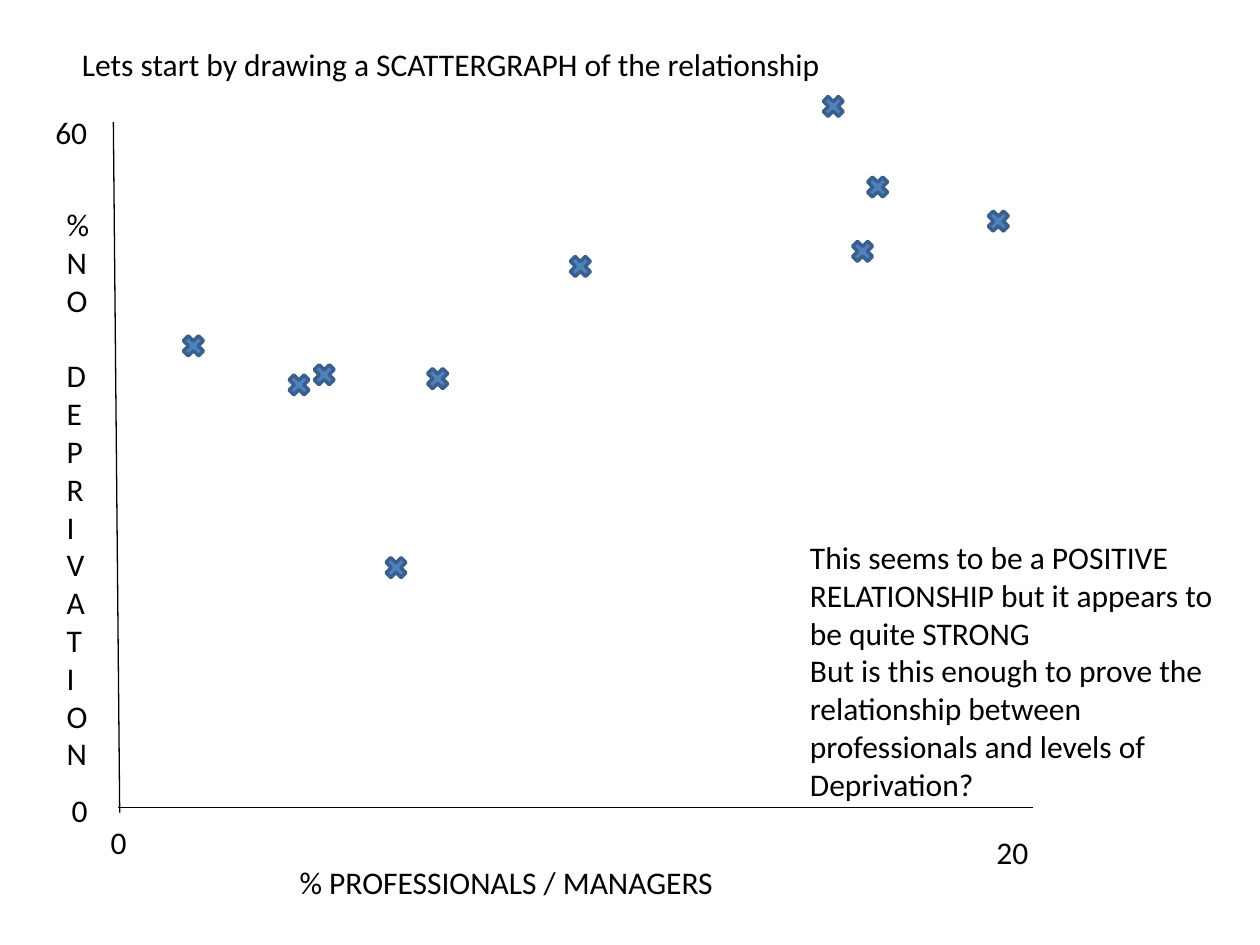
from collections import namedtuple

from lxml.etree import SubElement
from pptx import Presentation
from pptx.dml.color import RGBColor
from pptx.enum.shapes import MSO_CONNECTOR, MSO_SHAPE
from pptx.enum.text import MSO_ANCHOR, MSO_AUTO_SIZE, PP_ALIGN
from pptx.oxml.ns import qn
from pptx.util import Inches, Pt

COLOURS = {"ink": "000000", "marker": "4F81BD", "marker_edge": "3A5F8C"}
FONT = "Calibri"
TEXT_SIZE = 18
LINE_HEIGHT = 0.4
MARKER_SIZE = 0.23
X_MAX, Y_MAX = 20, 60

Box = namedtuple("Box", "left top width height")

TITLE = Box(0.55, 0.31, 8.52, LINE_HEIGHT)
PLOT = Box(0.94, 0.97, 7.26, 5.44)
CONCLUSION = Box(6.33, 4.22, 3.44, 2.22)

# (% professionals / managers, % no deprivation)
POINTS = [
    (6.98, 37.55), (4.5, 37.89), (10.1, 47.37), (6.07, 21.01), (19.24, 51.34),
    (16.6, 54.32), (15.63, 61.38), (3.95, 37), (16.27, 48.69), (1.64, 40.42),
]


def colour(name):
    return RGBColor.from_string(COLOURS[name])


def write(frame, paragraphs):
    frame.word_wrap = True
    frame.auto_size = MSO_AUTO_SIZE.NONE
    frame.vertical_anchor = MSO_ANCHOR.TOP
    frame.text = "\n".join(paragraphs)
    for para in frame.paragraphs:
        para.alignment = PP_ALIGN.LEFT
        para.font.name = FONT
        para.font.size = Pt(TEXT_SIZE)
        para.font.color.rgb = colour("ink")


def add_text(page, box, *paragraphs):
    frame = page.shapes.add_textbox(*map(Inches, box)).text_frame
    write(frame, paragraphs)
    return frame


def add_title(page, box, text):
    title = page.shapes.title
    title.left, title.top, title.width, title.height = map(Inches, box)
    write(title.text_frame, [text])


def add_axis(page, start, end):
    axis = page.shapes.add_connector(
        MSO_CONNECTOR.STRAIGHT, *map(Inches, (*start, *end)))
    axis.line.color.rgb = colour("ink")
    axis.line.width = Pt(0.75)
    SubElement(axis._element.spPr, qn("a:effectLst"))


def add_axes(page, plot):
    base = plot.top + plot.height
    add_axis(page, (plot.left, base), (plot.left + plot.width, base))
    # The vertical axis leans slightly and overshoots the base line.
    add_axis(page, (plot.left + 0.01, base + 0.04), (plot.left - 0.04, plot.top))


def add_axis_labels(page, plot):
    base, right = plot.top + plot.height, plot.left + plot.width
    add_text(page, Box(plot.left - 0.16, base + 0.07, 0.55, LINE_HEIGHT), "0")
    add_text(page, Box(right - 0.39, base + 0.15, 0.47, LINE_HEIGHT), str(X_MAX))
    add_text(page, Box(plot.left + 1.34, base + 0.39, 4.14, LINE_HEIGHT),
             "% PROFESSIONALS / MANAGERS")
    add_text(page, Box(plot.left - 0.47, base - 0.18, 0.31, LINE_HEIGHT), "0")
    add_text(page, Box(plot.left - 0.6, plot.top - 0.12, 0.55, LINE_HEIGHT), str(Y_MAX))
    # The box is one letter wide; each narrow I needs a paragraph of its own.
    name = add_text(page, Box(plot.left - 0.51, plot.top + 0.61, 0.44, 4.64),
                    "%NO", "DEPR", "I", "VAT", "I", "ON")
    name.paragraphs[1].space_before = Pt(TEXT_SIZE * 1.2)


def add_markers(page, plot, points):
    for x_value, y_value in points:
        centre_x = plot.left + plot.width * x_value / X_MAX
        centre_y = plot.top + plot.height * (1 - y_value / Y_MAX)
        marker = page.shapes.add_shape(
            MSO_SHAPE.MATH_MULTIPLY,
            Inches(centre_x - MARKER_SIZE / 2), Inches(centre_y - MARKER_SIZE / 2),
            Inches(MARKER_SIZE), Inches(MARKER_SIZE))
        marker.shadow.inherit = False
        marker.fill.solid()
        marker.fill.fore_color.rgb = colour("marker")
        marker.line.color.rgb = colour("marker_edge")
        marker.line.width = Pt(2)


def main():
    deck = Presentation()
    deck.slide_width, deck.slide_height = Inches(10), Inches(7.5)
    page = deck.slides.add_slide(deck.slide_layouts.get_by_name("Title Only"))
    add_title(page, TITLE, "Lets start by drawing a SCATTERGRAPH of the relationship")
    add_axes(page, PLOT)
    add_axis_labels(page, PLOT)
    add_markers(page, PLOT, POINTS)
    add_text(page, CONCLUSION,
             "This seems to be a POSITIVE RELATIONSHIP but it appears to be quite STRONG",
             "But is this enough to prove the relationship between "
             "professionals and levels of Deprivation?")
    deck.save("out.pptx")


if __name__ == "__main__":
    main()
